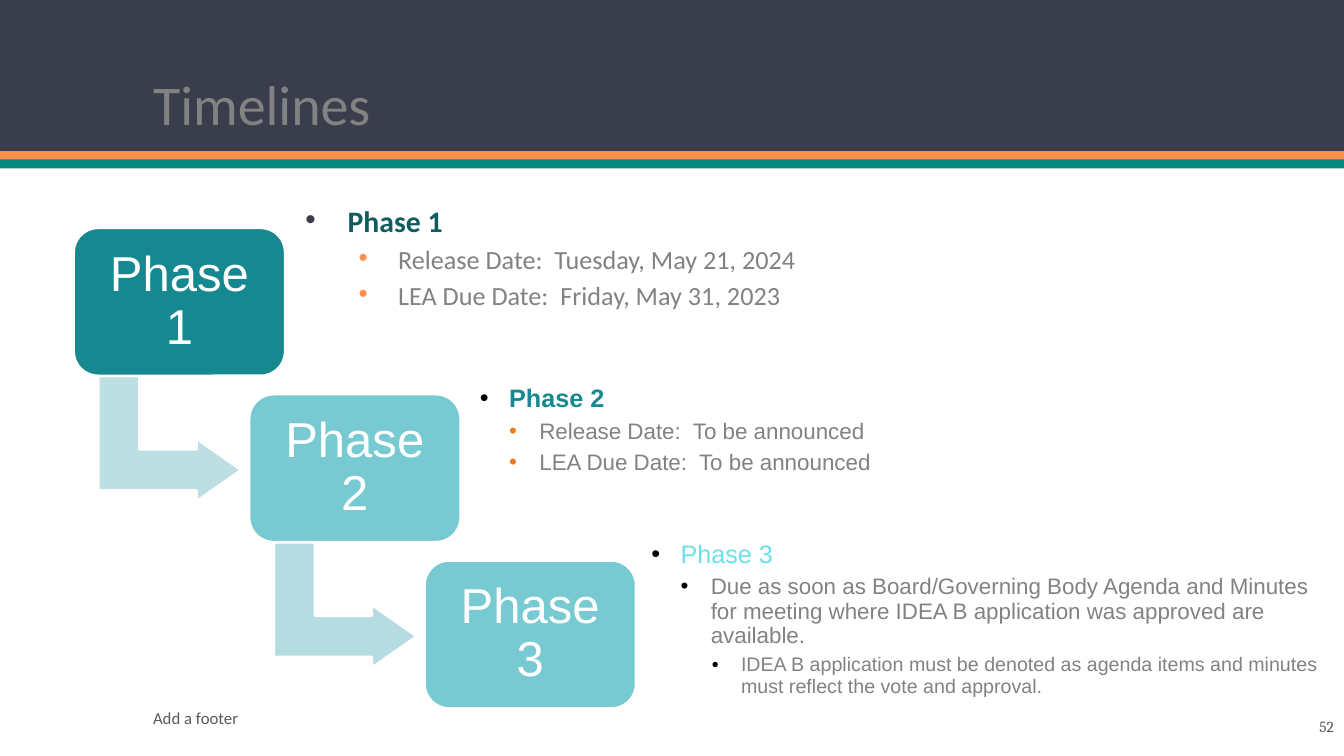
from dataclasses import dataclass

from lxml import etree
from pptx import Presentation
from pptx.dml.color import RGBColor
from pptx.enum.shapes import MSO_SHAPE
from pptx.enum.text import MSO_ANCHOR, PP_ALIGN
from pptx.oxml.ns import qn
from pptx.util import Inches, Pt

RECTANGLE = MSO_SHAPE.RECTANGLE
ROUNDED = MSO_SHAPE.ROUNDED_RECTANGLE
BENT_ARROW = MSO_SHAPE.BENT_UP_ARROW
TOP, MIDDLE, BOTTOM = MSO_ANCHOR.TOP, MSO_ANCHOR.MIDDLE, MSO_ANCHOR.BOTTOM
LEFT, CENTER, RIGHT = PP_ALIGN.LEFT, PP_ALIGN.CENTER, PP_ALIGN.RIGHT


@dataclass(frozen=True)
class Theme:
    """Colours, fonts and type sizes of the slide."""
    header: str = "3A3D4B"
    orange: str = "FF914D"
    green: str = "048A81"
    white: str = "FFFFFF"
    black: str = "000000"
    grey: str = "828282"
    footer: str = "595959"
    bullet_orange: str = "EF7920"
    phase_names: tuple = ("0F5C60", "178A91", "6AE1E8")
    boxes: tuple = ("16888F", "77CAD1", "77CAD1")
    arrows: tuple = ("BDDFE3", "B5DCE0")
    heading_font: str = "Calibri"
    body_font: str = "Arial"
    number_font: str = "Cambria"
    title_size: float = 40
    box_size: float = 35
    first_sizes: tuple = (21.2, 18.7)
    detail_sizes: tuple = (18, 16, 14)
    footer_size: float = 12
    number_size: float = 11


THEME = Theme()
TEXT_INSETS = (0.1, 0.05, 0.1, 0.05)
FIRST_INDENTS = ((0.5, -0.42), (1, -0.39))
DETAIL_INDENTS = ((0.29, -0.29), (0.59, -0.3), (0.89, -0.29))


def apply_format(target, values):
    """Set every attribute named in a dict of format values."""
    for name, value in values.items():
        setattr(target, name, value)


def add_block(shapes, kind, place, fill, line=None):
    """Add a filled preset shape without shadow."""
    shape = shapes.add_shape(kind, *map(Inches, place))
    shape.shadow.inherit = False
    shape.fill.solid()
    shape.fill.fore_color.rgb = RGBColor.from_string(fill)
    if line:
        shape.line.color.rgb = RGBColor.from_string(line)
        shape.line.width = Pt(2)
    else:
        shape.line.fill.background()
    return shape


def format_frame(frame, insets, anchor):
    """Set wrapping, anchor and margins of a text frame."""
    left, top, right, bottom = map(Inches, insets)
    apply_format(frame, {
        "word_wrap": True, "vertical_anchor": anchor,
        "margin_left": left, "margin_top": top,
        "margin_right": right, "margin_bottom": bottom,
    })


def write_text(paragraph, text, font, size, color, bold=False, **values):
    """Write one run into a paragraph and format both."""
    run = paragraph.add_run()
    run.text = text
    apply_format(run.font, {"name": font, "size": Pt(size), "bold": bold})
    run.font.color.rgb = RGBColor.from_string(color)
    apply_format(paragraph, values)


def add_label(slide, place, text, font, size, color, anchor=MIDDLE, **values):
    """Add a text box with a single line of text."""
    frame = slide.shapes.add_textbox(*map(Inches, place)).text_frame
    format_frame(frame, TEXT_INSETS, anchor)
    write_text(frame.paragraphs[0], text, font, size, color, **values)


def add_bullet(paragraph, color, indent):
    """Give a paragraph a coloured bullet and a hanging indent."""
    properties = paragraph._p.get_or_add_pPr()
    margin, hanging = indent
    properties.set("marL", str(Inches(margin)))
    properties.set("indent", str(Inches(hanging)))
    bullet_color = etree.SubElement(properties, qn("a:buClr"))
    etree.SubElement(bullet_color, qn("a:srgbClr"), val=color)
    etree.SubElement(properties, qn("a:buFont"), typeface="Arial")
    etree.SubElement(properties, qn("a:buChar"), char="•")


def add_bullet_list(slide, place, items, name_color, bullet_colors, font=THEME.body_font,
                    sizes=THEME.detail_sizes, indents=DETAIL_INDENTS, insets=(0, 0, 0, 0),
                    spacing=0.9, gaps=(10, 5, 5), bold=True):
    """Add a phase name with its indented details, given as (level, text)."""
    frame = slide.shapes.add_textbox(*map(Inches, place)).text_frame
    format_frame(frame, insets, TOP)
    for index, (level, text) in enumerate(items):
        paragraph = frame.add_paragraph() if index else frame.paragraphs[0]
        color = THEME.grey if level else name_color
        write_text(paragraph, text, font, sizes[level], color, bold and level == 0,
                   level=level, line_spacing=spacing, space_before=Pt(gaps[level]))
        add_bullet(paragraph, bullet_colors[min(level, 1)], indents[level])


def add_header(slide):
    """Add the dark header, its two stripes and the title."""
    for top, height, color in ((0, 1.5, THEME.header), (1.5, 0.09, THEME.orange),
                               (1.58, 0.09, THEME.green)):
        add_block(slide.shapes, RECTANGLE, (0, top, 13.33, height), color)
    add_label(slide, (1.42, 0.28, 10.5, 1.13), "Timelines", THEME.heading_font,
              THEME.title_size, THEME.grey, BOTTOM, line_spacing=0.9)


def add_staircase(slide):
    """Add the descending phase boxes and the bent arrows between them."""
    shapes = slide.shapes.add_group_shape().shapes
    for step, fill in enumerate(THEME.boxes):
        across, down = 1.74 * step, 1.65 * step
        if step < len(THEME.arrows):
            arrow = add_block(shapes, BENT_ARROW, (1.06 + across, 3.64 + down, 1.25, 1.42),
                              THEME.arrows[step], THEME.white)
            arrow.rotation = 90
            for index, value in enumerate((0.328, 0.25, 0.358)):
                arrow.adjustments[index] = value
        box = add_block(shapes, ROUNDED, (0.73 + across, 2.26 + down, 2.1, 1.47),
                        fill, THEME.white)
        format_frame(box.text_frame, (0.15,) * 4, MIDDLE)
        write_text(box.text_frame.paragraphs[0], f"Phase {step + 1}", THEME.body_font,
                   THEME.box_size, THEME.white, alignment=CENTER, line_spacing=0.9)


def add_details(slide):
    """Add the bullet list beside each phase box."""
    first, second, third = THEME.phase_names
    add_bullet_list(slide, (2.85, 2.06, 5.94, 1.36), (
        (0, "Phase 1"),
        (1, "Release Date:  Tuesday, May 21, 2024"),
        (1, "LEA Due Date:  Friday, May 31, 2023"),
    ), first, (THEME.header, THEME.orange), THEME.heading_font, THEME.first_sizes,
        FIRST_INDENTS, TEXT_INSETS, 0.7, (18, 10))
    add_bullet_list(slide, (6.46, 5.37, 6.64, 1.52), (
        (0, "Phase 3"),
        (1, "Due as soon as Board/Governing Body Agenda and Minutes for meeting "
            "where IDEA B application was approved are available."),
        (2, "IDEA B application must be denoted as agenda items and minutes "
            "must reflect the vote and approval."),
    ), third, (THEME.black, THEME.black), bold=False)
    add_bullet_list(slide, (4.76, 3.83, 4.03, 1.13), (
        (0, "Phase 2"),
        (1, "Release Date:  To be announced"),
        (1, "LEA Due Date:  To be announced"),
    ), second, (THEME.black, THEME.bullet_orange))


def add_footer(slide):
    """Add the footer text and the slide number."""
    add_label(slide, (1.42, 6.97, 6.83, 0.3), "Add a footer", THEME.heading_font,
              THEME.footer_size, THEME.footer, alignment=LEFT)
    add_label(slide, (11.23, 6.97, 2.1, 0.47), "52", THEME.number_font,
              THEME.number_size, THEME.footer, alignment=RIGHT)


def main():
    """Build the timeline slide and save it."""
    presentation = Presentation()
    apply_format(presentation, {"slide_width": Inches(13.33), "slide_height": Inches(7.5)})
    slide = presentation.slides.add_slide(presentation.slide_layouts[6])
    add_header(slide)
    add_footer(slide)
    add_staircase(slide)
    add_details(slide)
    presentation.save("out.pptx")


if __name__ == "__main__":
    main()
